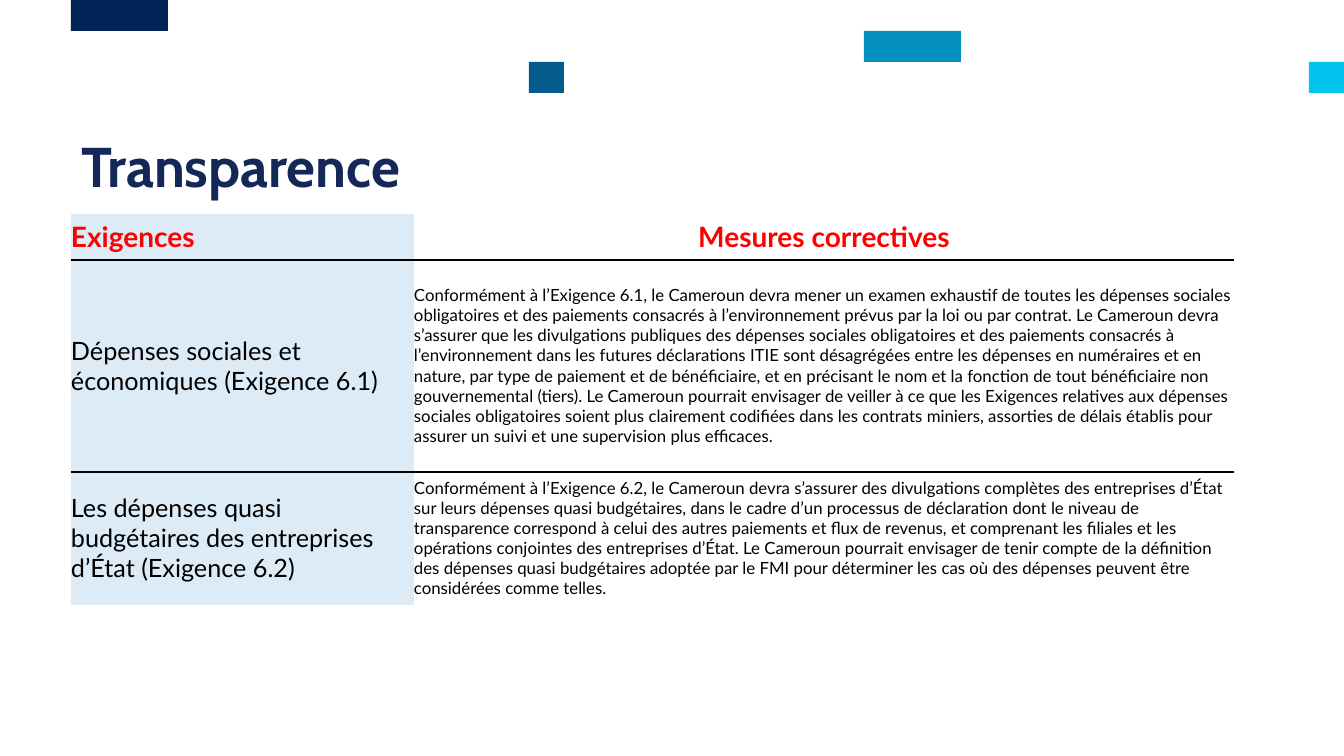
from lxml.etree import SubElement
from pptx import Presentation
from pptx.dml.color import RGBColor
from pptx.enum.shapes import MSO_SHAPE as Shape
from pptx.enum.text import MSO_ANCHOR as Anchor, MSO_AUTO_SIZE as AutoSize, PP_ALIGN as Align
from pptx.oxml.ns import qn
from pptx.util import Pt

PX = 914400 / 100.8
RULE = "000100"
HEADINGS = ("Exigences", ("Mesures correctives",))
MEASURES = (
    (
        "Dépenses sociales et économiques (Exigence 6.1)",
        (
            "Conformément à l’Exigence 6.1, le Cameroun devra mener un examen exhaustif de toutes les "
            "dépenses sociales obligatoires et des paiements consacrés à l’environnement prévus par la "
            "loi ou par contrat.",
            "Le Cameroun devra s’assurer que les divulgations publiques des dépenses sociales "
            "obligatoires et des paiements consacrés à l’environnement dans les futures déclarations "
            "ITIE sont désagrégées entre les dépenses en numéraires et en nature, par type de paiement "
            "et de bénéficiaire, et en précisant le nom et la fonction de tout bénéficiaire non "
            "gouvernemental (tiers).",
            "Le Cameroun pourrait envisager de veiller à ce que les Exigences relatives aux dépenses "
            "sociales obligatoires soient plus clairement codifiées dans les contrats miniers, "
            "assorties de délais établis pour assurer un suivi et une supervision plus efficaces.",
        ),
    ),
    (
        "Les dépenses quasi budgétaires des entreprises d’État (Exigence 6.2)",
        (
            "Conformément à l’Exigence 6.2, le Cameroun devra s’assurer des divulgations complètes des "
            "entreprises d’État sur leurs dépenses quasi budgétaires, dans le cadre d’un processus de "
            "déclaration dont le niveau de transparence correspond à celui des autres paiements et "
            "flux de revenus, et comprenant les filiales et les opérations conjointes des entreprises "
            "d’État.",
            "Le Cameroun pourrait envisager de tenir compte de la définition des dépenses quasi "
            "budgétaires adoptée par le FMI pour déterminer les cas où des dépenses peuvent être "
            "considérées comme telles.",
        ),
    ),
)


def px(length):
    """Turn pixels into EMU."""
    return round(length * PX)


def color(value):
    """Turn a hex string into a colour."""
    return RGBColor.from_string(value)


def style(para, name, size, ink, bold=False):
    """Set the font of a whole paragraph."""
    font = para.font
    font.name, font.size, font.bold = name, Pt(size), bold
    font.color.rgb = color(ink)


def add_blocks(page, box):
    """Place the coloured blocks in the top band, in three equal rows."""
    left, top, width, height = box
    step = height // 3
    blocks = (
        (71, 0, 97, "002357"),
        (529, 2, 35, "025B8B"),
        (864, 1, 97, "038FBF"),
        (width - 35, 2, 35, "00C3F0"),
    )
    for offset, row, length, ink in blocks:
        block = page.shapes.add_shape(
            Shape.RECTANGLE, px(left + offset), px(top + row * step), px(length), px(step))
        block.shadow.inherit = False
        block.fill.solid()
        block.fill.fore_color.rgb = color(ink)
        block.line.fill.background()


def add_title(page, box, words):
    """Move the title placeholder into the box and fill it."""
    title = page.shapes.title
    title.left, title.top, title.width, title.height = map(px, box)
    frame = title.text_frame
    frame.text = words
    frame.word_wrap = True
    frame.auto_size = AutoSize.NONE
    frame.vertical_anchor = Anchor.TOP
    para = frame.paragraphs[0]
    para.alignment = Align.LEFT
    para.line_spacing = 0.94
    para.space_before, para.space_after = Pt(0), Pt(2)
    style(para, "Cabin", 40, "132856", True)


def set_borders(cell, ruled):
    """Draw the ruled edges of a cell and clear its other edges."""
    properties = cell._tc.get_or_add_tcPr()
    for edge in ("lnL", "lnR", "lnT", "lnB"):
        line = SubElement(properties, qn(f"a:{edge}"), w=str(Pt(1)))
        if edge in ruled:
            fill = SubElement(line, qn("a:solidFill"))
            SubElement(fill, qn("a:srgbClr"), val=RULE)
        else:
            SubElement(line, qn("a:noFill"))


def fill_cell(cell, words, is_head, is_first):
    """Write one table cell and set its fill and text."""
    cell.margin_left = cell.margin_right = cell.margin_top = 0
    cell.margin_bottom = px(1)
    cell.vertical_anchor = Anchor.MIDDLE
    if is_first:
        cell.fill.solid()
        cell.fill.fore_color.rgb = color("DDEBF7")
    else:
        cell.fill.background()
    cell.text = words
    para = cell.text_frame.paragraphs[0]
    para.alignment = Align.CENTER if is_head and not is_first else Align.LEFT
    if is_head:
        style(para, "Lato", 20, "FF0000", True)
    else:
        style(para, "Lato", 18 if is_first else 12, "000000")


def add_measures(page, box):
    """Build the table of requirements and corrective measures."""
    left, top, width, height = box
    rows = (HEADINGS, *MEASURES)
    frame = page.shapes.add_table(len(rows), 2, px(left), px(top), px(width), px(height))
    table = frame.table
    table.first_row = table.horz_banding = False
    for column, length in zip(table.columns, (343, width - 343)):
        column.width = px(length)
    for row, length in zip(table.rows, (46, 212, height - 258)):
        row.height = px(length)
    last = len(rows) - 1
    for index, (requirement, sentences) in enumerate(rows):
        ruled = [edge for edge, inner in (("lnT", index > 0), ("lnB", index < last)) if inner]
        for place, words in enumerate((requirement, " ".join(sentences))):
            cell = table.cell(index, place)
            set_borders(cell, ruled)
            fill_cell(cell, words, index == 0, place == 0)


def main():
    """Build the slide and save the deck."""
    deck = Presentation()
    deck.slide_width, deck.slide_height = px(1344), px(756)
    page = deck.slides.add_slide(deck.slide_layouts[5])
    add_blocks(page, (0, 0, 1344, 93))
    add_title(page, (71, 132, 1054, 82), "Transparence")
    add_measures(page, (71, 214, 1163, 391))
    deck.save("out.pptx")


if __name__ == "__main__":
    main()
